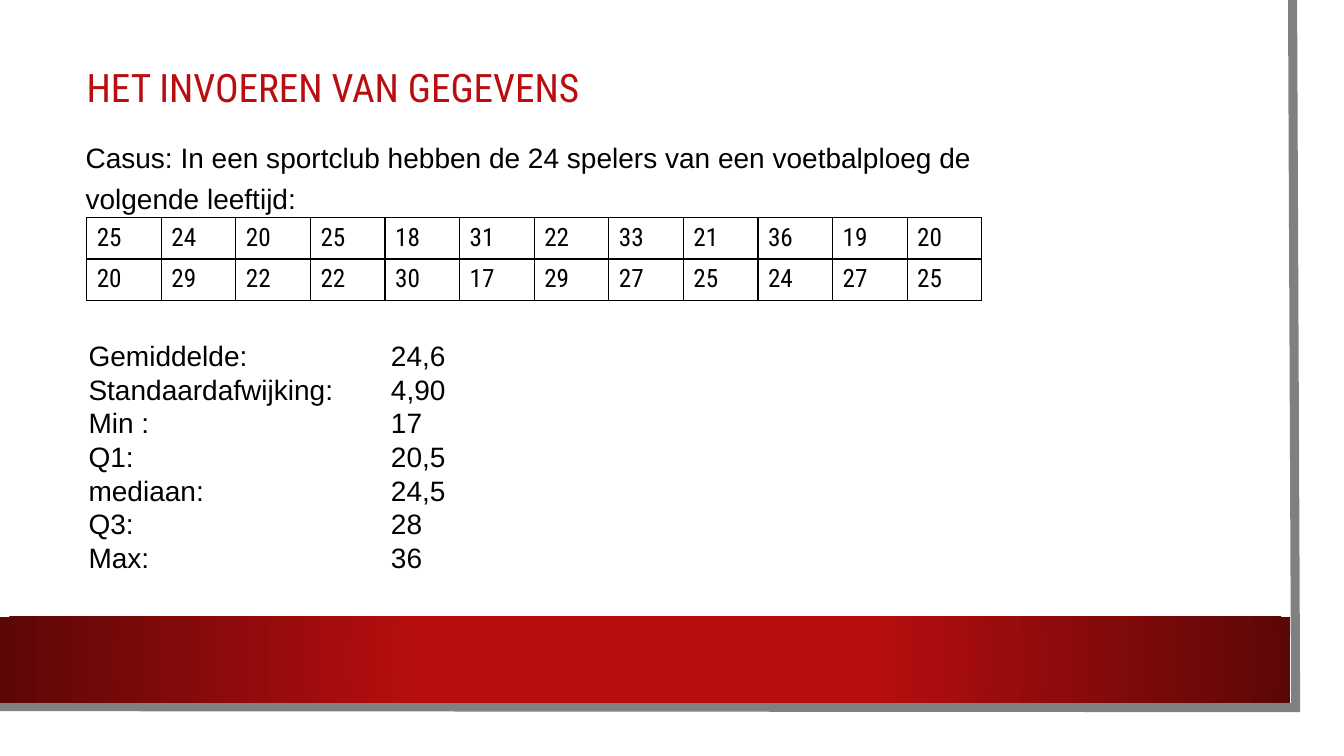
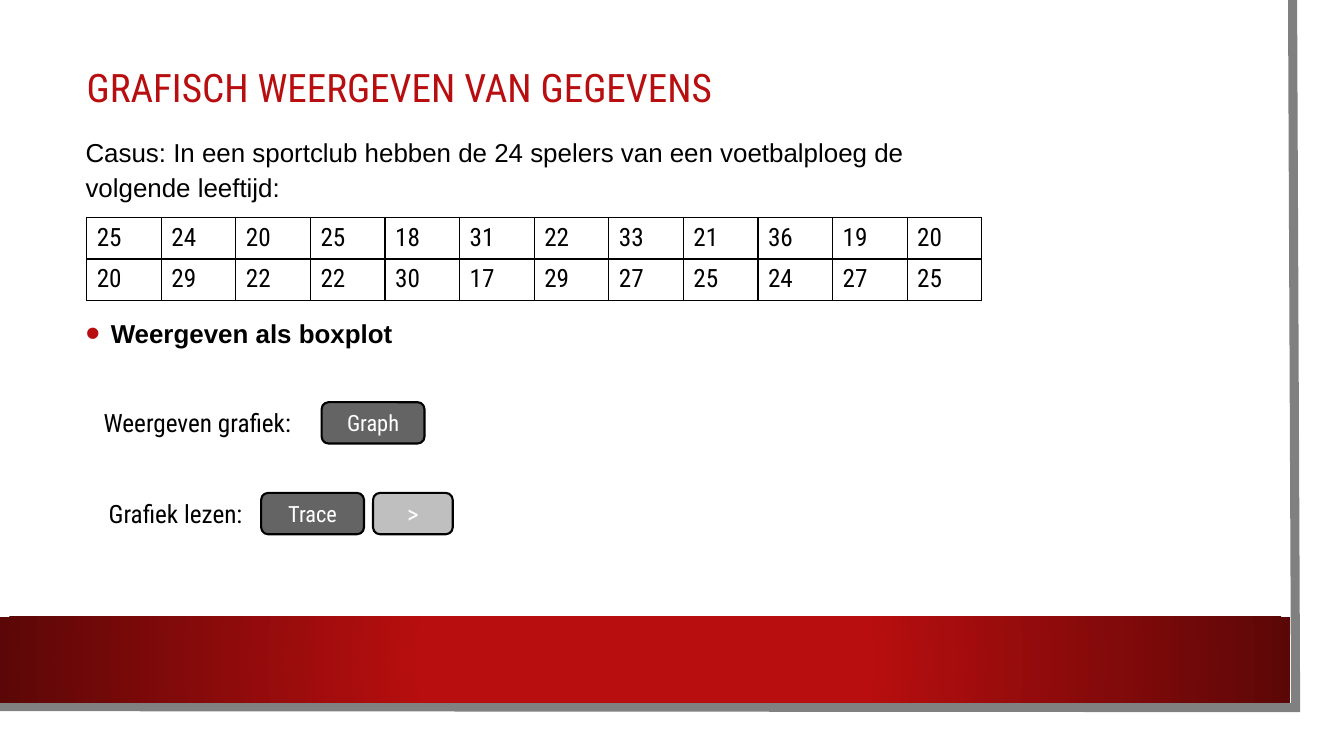
"""Build two slides on entering and plotting the ages of a football team."""
from lxml import etree
from pptx import Presentation
from pptx.dml.color import RGBColor
from pptx.enum.shapes import MSO_SHAPE
from pptx.enum.text import MSO_ANCHOR, PP_ALIGN
from pptx.oxml import parse_xml
from pptx.oxml.ns import nsdecls, qn
from pptx.util import Pt

RECTANGLE, ROUNDED = MSO_SHAPE.RECTANGLE, MSO_SHAPE.ROUNDED_RECTANGLE
LEFT, CENTER = PP_ALIGN.LEFT, PP_ALIGN.CENTER
TOP, MIDDLE = MSO_ANCHOR.TOP, MSO_ANCHOR.MIDDLE

RED = RGBColor(0xB8, 0x0E, 0x0F)
DARK_RED = RGBColor(0x5C, 0x07, 0x07)
BLACK = RGBColor(0, 0, 0)
WHITE = RGBColor(0xFF, 0xFF, 0xFF)
EDGE_GRAY = RGBColor(0x80, 0x80, 0x80)
KEY_GRAY = RGBColor(0x64, 0x64, 0x64)
ARROW_GRAY = RGBColor(0xBF, 0xBF, 0xBF)

PX = 9144
HEAD_FONT, BODY_FONT = "Roboto Condensed", "Arial"

CASE = ("Casus: In een sportclub hebben de 24 spelers van een voetbalploeg "
        "de volgende leeftijd:")
AGES = [
    [25, 24, 20, 25, 18, 31, 22, 33, 21, 36, 19, 20],
    [20, 29, 22, 22, 30, 17, 29, 27, 25, 24, 27, 25],
]
STATISTICS = [
    ("Gemiddelde:", "24,6"),
    ("Standaardafwijking:", "4,90"),
    ("Min :", "17"),
    ("Q1:", "20,5"),
    ("mediaan:", "24,5"),
    ("Q3:", "28"),
    ("Max:", "36"),
]
KEY_ROWS = [
    ("Weergeven grafiek:", 93, [("Graph", 319, 102, KEY_GRAY, 16)]),
    ("Grafiek lezen:", 98, [("Trace", 259, 102, KEY_GRAY, 16),
                            (">", 370, 79, ARROW_GRAY, 18)]),
]
KEY_TOP, KEY_STEP, KEY_HEIGHT = 399, 90, 41
EDGE_POINTS = [(1282, 0), (1285, 702), (-3, 701)]


def px(*lengths):
    return [length * PX for length in lengths]


def style(para, size, font=BODY_FONT, color=BLACK, align=LEFT, spacing=None):
    para.alignment = align
    if spacing:
        para.line_spacing = spacing
    para.font.size = Pt(size)
    para.font.name = font
    para.font.color.rgb = color


def add_text(page, place, lines):
    box = page.shapes.add_textbox(*px(*place))
    frame = box.text_frame
    frame.word_wrap = True
    frame.vertical_anchor = TOP
    frame.text = "\n".join(lines)
    return frame.paragraphs


def add_ppr(para, *parts):
    properties = para._p.get_or_add_pPr()
    for part in parts:
        properties.append(parse_xml(part.replace("/>", f" {nsdecls('a')}/>", 1)
                                    if part.endswith("/>") and part.count("<") == 1
                                    else part.replace(">", f" {nsdecls('a')}>", 1)))
    return properties


def decorate_layout(layout, page):
    builder = page.shapes.build_freeform(*EDGE_POINTS[0], scale=float(PX))
    builder.add_line_segments(EDGE_POINTS[1:], close=False)
    edge = builder.convert_to_shape()
    edge.shadow.inherit = False
    edge.fill.background()
    edge.line.color.rgb = EDGE_GRAY
    edge.line.width = Pt(6.5)
    etree.SubElement(edge.line._get_or_add_ln(), qn("a:miter"), lim="800000")

    band = page.shapes.add_shape(RECTANGLE, *px(0, 612, 1280, 85))
    band.shadow.inherit = False
    band.line.fill.background()
    band.element.spPr.insert(2, parse_xml(
        f'<a:gradFill {nsdecls("a")} rotWithShape="1"><a:gsLst>'
        f'<a:gs pos="34000"><a:srgbClr val="{RED}"/></a:gs>'
        f'<a:gs pos="100000"><a:srgbClr val="{DARK_RED}"/></a:gs></a:gsLst>'
        '<a:path path="circle"><a:fillToRect l="50000" t="50000" r="50000" b="50000"/>'
        '</a:path></a:gradFill>'))

    for index, shape in enumerate((edge, band), start=2):
        layout.shapes.element.insert(index, shape.element)
    title = layout.placeholders[0]
    title.left, title.top, title.width, title.height = px(76, 26, 1137, 126)


def set_title(page, text):
    title = page.shapes.title
    title.text_frame.text = text
    title.text_frame.vertical_anchor = MIDDLE
    style(title.text_frame.paragraphs[0], 28, HEAD_FONT, RED, spacing=0.9)


def add_ages(page):
    table = page.shapes.add_table(len(AGES), len(AGES[0]), *px(86, 216, 888, 82)).table
    table.first_row = table.horz_banding = False
    for row, ages in enumerate(AGES):
        for column, age in enumerate(ages):
            cell = table.cell(row, column)
            cell.text = str(age)
            style(cell.text_frame.paragraphs[0], 18, HEAD_FONT)
            cell.fill.background()
            for index, side in enumerate("LRTB"):
                cell._tc.get_or_add_tcPr().insert(index, parse_xml(
                    f'<a:ln{side} {nsdecls("a")} w="12700"><a:solidFill>'
                    f'<a:srgbClr val="{BLACK}"/></a:solidFill></a:ln{side}>'))


def add_statistics(page):
    lines = [f"{label}\t{value}" for label, value in STATISTICS]
    for para in add_text(page, (78, 331, 667, 246), lines):
        add_ppr(para, f'<a:tabLst><a:tab pos="{300 * PX}" algn="l"/></a:tabLst>')
        style(para, 20, spacing=Pt(24))


def add_bullet(para):
    properties = add_ppr(
        para,
        f'<a:buClr><a:srgbClr val="{RED}"/></a:buClr>',
        '<a:buSzPct val="160000"/>',
        '<a:buFont typeface="Arial"/>',
        '<a:buChar char="•"/>')
    properties.set("marL", str(25 * PX))
    properties.set("indent", str(-25 * PX))


def add_key(page, text, place, fill, size):
    key = page.shapes.add_shape(ROUNDED, *px(*place))
    key.shadow.inherit = False
    key.fill.solid()
    key.fill.fore_color.rgb = fill
    key.line.color.rgb = BLACK
    key.line.width = Pt(1.5)
    key.text_frame.text = text
    key.text_frame.vertical_anchor = MIDDLE
    style(key.text_frame.paragraphs[0], size, HEAD_FONT, WHITE, CENTER)


def add_key_rows(page):
    for row, (label, left, keys) in enumerate(KEY_ROWS):
        top = KEY_TOP + row * KEY_STEP
        para = add_text(page, (left, top, 220, KEY_HEIGHT), [label])[0]
        style(para, 18, HEAD_FONT)
        for text, key_left, width, fill, size in keys:
            add_key(page, text, (key_left, top, width, KEY_HEIGHT), fill, size)


def main():
    deck = Presentation()
    deck.slide_width, deck.slide_height = px(1333, 750)
    layout = deck.slide_layouts[5]

    entry = deck.slides.add_slide(layout)
    decorate_layout(layout, entry)
    set_title(entry, "HET INVOEREN VAN GEGEVENS")
    style(add_text(entry, (75, 128, 908, 88), [CASE])[0], 20, spacing=1.2)
    add_ages(entry)
    add_statistics(entry)

    graph = deck.slides.add_slide(layout)
    set_title(graph, "GRAFISCH WEERGEVEN VAN GEGEVENS")
    case, task = add_text(graph, (75, 128, 908, 229), [CASE, "Weergeven als boxplot"])
    style(case, 18.5, spacing=1.1)
    add_bullet(task)
    style(task, 18.5, spacing=1.1)
    task.space_before = Pt(80)
    task.font.bold = True
    add_ages(graph)
    add_key_rows(graph)

    deck.save("out.pptx")


if __name__ == "__main__":
    main()
